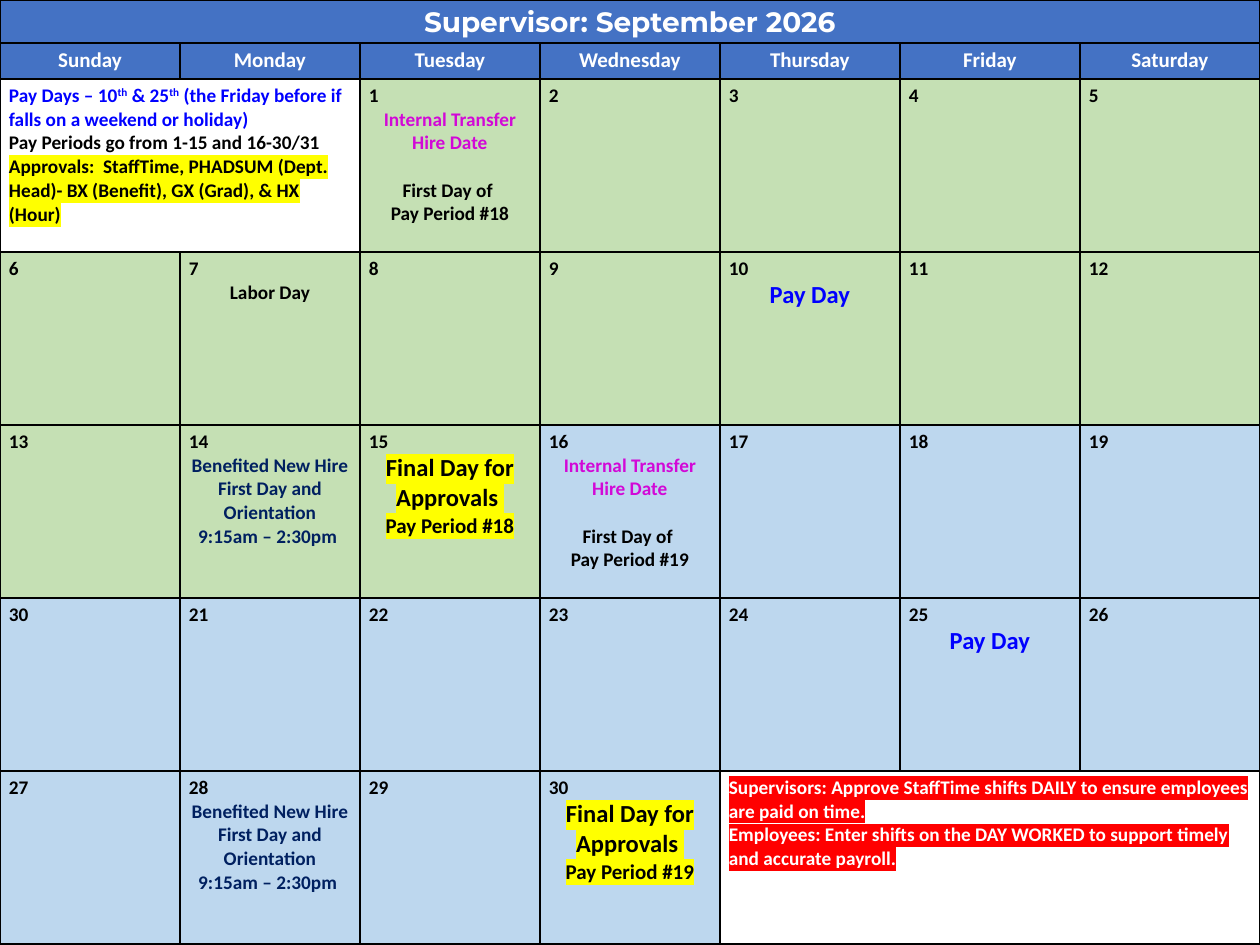
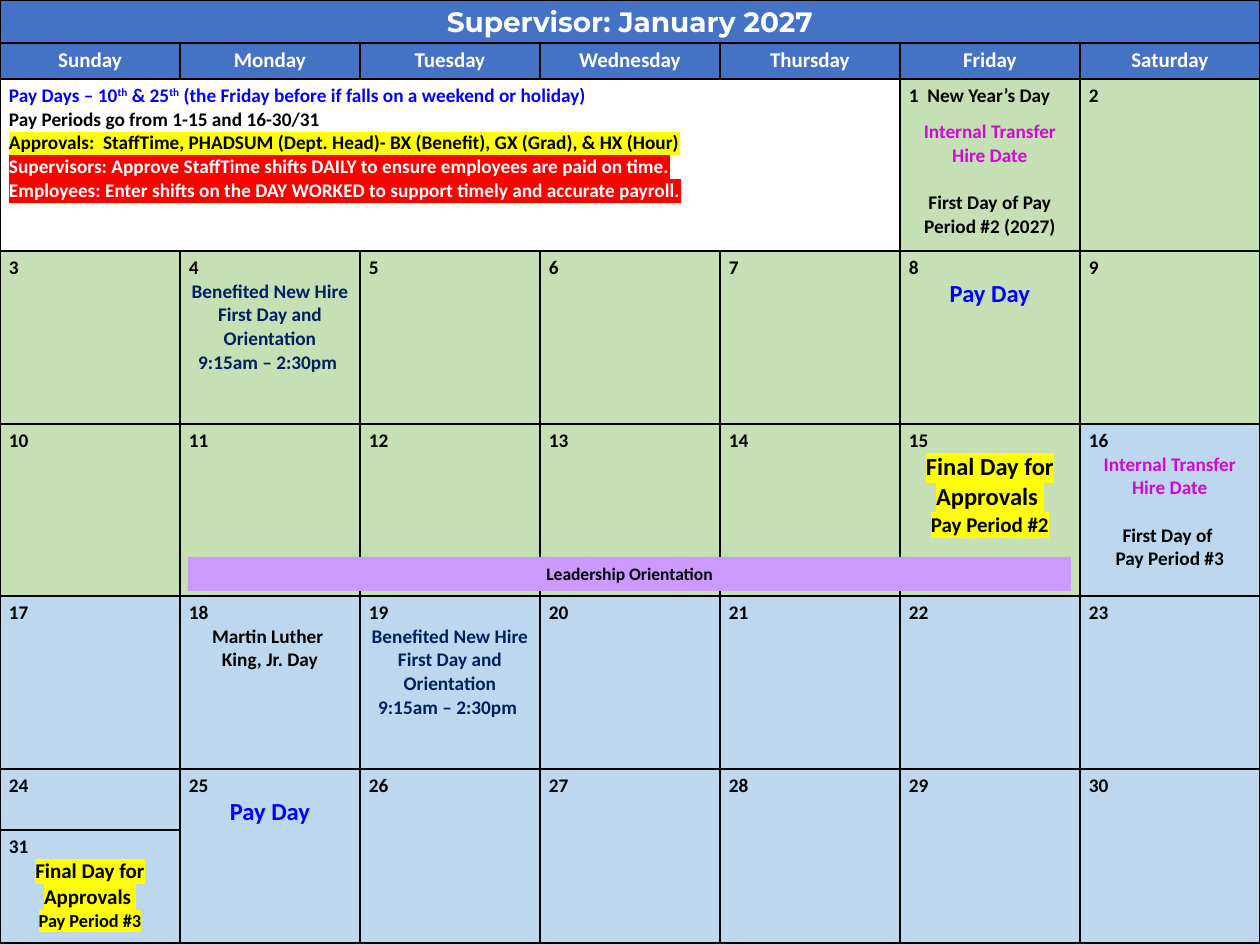
from dataclasses import dataclass
from lxml.etree import SubElement
from pptx import Presentation
from pptx.dml.color import RGBColor
from pptx.enum.shapes import MSO_SHAPE
from pptx.enum.text import PP_ALIGN
from pptx.oxml.ns import qn
from pptx.util import Pt


@dataclass(frozen=True)
class Style:
    size: float
    color: str
    highlight: str = ""
    align: PP_ALIGN = PP_ALIGN.CENTER
    font: str = "Calibri"


class Theme:
    header = "4472C4"
    first_half = "C5E0B4"
    second_half = "BDD7EE"
    note = "FFFFFF"
    band = "CC99FF"
    border = "000000"
    backdrop = [(0, "F6F8FC"), (74, "ABC0E4"), (83, "ABC0E4"), (100, "C7D5ED")]
    styles = {
        "title": Style(16, "FFFFFF", font="Montserrat"),
        "weekday": Style(12, "FFFFFF"),
        "date": Style(11, "000000", align=PP_ALIGN.LEFT),
        "event": Style(11, "000000"),
        "transfer": Style(11, "D208D7"),
        "orientation": Style(11, "002060"),
        "pay day": Style(14, "0000FF"),
        "final day": Style(14, "000000", "FFFF00"),
        "final period": Style(12, "000000", "FFFF00"),
        "small final period": Style(10.5, "000000", "FFFF00"),
        "pay note": Style(11, "0000FF", align=PP_ALIGN.LEFT),
        "approval note": Style(11, "000000", "FFFF00", PP_ALIGN.LEFT),
        "alert": Style(11, "FFFFFF", "FF0000", PP_ALIGN.LEFT),
        "band": Style(10, "000000"),
    }


def px(length):
    return round(length * 914400 / 126)


def write(frame, lines):
    for index, (name, text, gap) in enumerate(lines):
        style = Theme.styles[name]
        para = frame.add_paragraph() if index else frame.paragraphs[0]
        para.alignment = style.align
        if gap:
            para.space_before = Pt(gap)
        para.font.name = style.font
        para.font.size = Pt(style.size)
        para.font.bold = True
        para.font.color.rgb = RGBColor.from_string(style.color)
        for part, piece in enumerate(text.split("^")):
            span = para.add_run()
            span.text = piece
            properties = span._r.get_or_add_rPr()
            if part % 2:
                properties.set("baseline", "30000")
            if style.highlight:
                highlight = SubElement(properties, qn("a:highlight"))
                SubElement(highlight, qn("a:srgbClr"), val=style.highlight)


weekdays = ["Sunday", "Monday", "Tuesday", "Wednesday", "Thursday", "Friday", "Saturday"]
pay_notes = [
    ("pay note", "Pay Days – 10^th^ & 25^th^ (the Friday before if falls on a weekend or holiday)", 0),
    ("date", "Pay Periods go from 1-15 and 16-30/31", 0),
    ("approval note", "Approvals:  StaffTime, PHADSUM (Dept. Head)- BX (Benefit), GX (Grad), & HX (Hour)", 0),
]
alerts = [
    ("alert", "Supervisors: Approve StaffTime shifts DAILY to ensure employees are paid on time.", 0),
    ("alert", "Employees: Enter shifts on the DAY WORKED to support timely and accurate payroll.", 0),
]
pay_day = [("pay day", "Pay Day", 0)]
orientation = [
    ("orientation", "Benefited New Hire First Day and Orientation", 0),
    ("orientation", "9:15am – 2:30pm ", 0),
]
final_day = ("final day", "Final Day for Approvals ", 0)
transfer = ("transfer", "Internal Transfer Hire Date", 0)
period_start = [transfer, ("event", "First Day of ", 13.4)]

months = [
    {
        "title": "Supervisor: September 2026",
        "heights": [43, 36] + [173] * 5,
        "offset": 2,
        "days": 30,
        "labels": {20: "30"},
        "notes": [(2, 0, 1, pay_notes), (6, 4, 6, alerts)],
        "split_columns": [],
        "bands": [],
        "events": {
            1: [*period_start, ("event", "Pay Period #18", 0)],
            7: [("event", "Labor Day", 0)],
            10: pay_day,
            14: orientation,
            15: [final_day, ("final period", "Pay Period #18", 0)],
            16: [*period_start, ("event", "Pay Period #19", 0)],
            25: pay_day,
            28: orientation,
            30: [final_day, ("final period", "Pay Period #19", 0)],
        },
    },
    {
        "title": "Supervisor: January 2027",
        "heights": [43, 36, 172, 173, 172, 173, 61, 113],
        "offset": 5,
        "days": 31,
        "labels": {1: "1  New Year’s Day"},
        "notes": [(2, 0, 4, pay_notes + alerts)],
        "split_columns": range(1, 7),
        "bands": [("Leadership Orientation", 188, 557, 883, 34)],
        "events": {
            1: [
                ("transfer", "Internal Transfer Hire Date", 7.3),
                ("event", "First Day of Pay Period #2 (2027)", 13.4),
            ],
            4: orientation,
            8: pay_day,
            15: [final_day, ("final period", "Pay Period #2", 0)],
            16: [*period_start, ("event", "Pay Period #3", 0)],
            18: [("event", "Martin Luther ", 0), ("event", "King, Jr. Day", 0)],
            19: orientation,
            25: pay_day,
            31: [
                ("final period", "Final Day for Approvals ", 0),
                ("small final period", "Pay Period #3", 0),
            ],
        },
    },
]

deck = Presentation()
deck.slide_width = px(1260)
deck.slide_height = px(945)

backdrop = deck.slide_master.background.fill
backdrop.gradient()
backdrop.gradient_angle = 270
stops = deck.slide_master.element.find(".//" + qn("a:gsLst"))
for stop in list(stops):
    stops.remove(stop)
for position, color in Theme.backdrop:
    stop = SubElement(stops, qn("a:gs"), pos=str(position * 1000))
    SubElement(stop, qn("a:srgbClr"), val=color)

for month in months:
    page = deck.slides.add_slide(deck.slide_layouts[6])
    heights = month["heights"]
    table = page.shapes.add_table(len(heights), 7, 0, 0, px(1260), px(sum(heights))).table
    table.first_row = False
    table.horz_banding = False
    for column in table.columns:
        column.width = px(180)
    for row, height in zip(table.rows, heights):
        row.height = px(height)

    for cell in table.iter_cells():
        cell.margin_left = cell.margin_right = px(9)
        cell.margin_top = px(5)
        cell.margin_bottom = px(4)
        for side in ("a:lnL", "a:lnR", "a:lnT", "a:lnB"):
            border = SubElement(cell._tc.get_or_add_tcPr(), qn(side), w=str(Pt(1)))
            fill = SubElement(border, qn("a:solidFill"))
            SubElement(fill, qn("a:srgbClr"), val=Theme.border)

    contents = [(0, 0, Theme.header, [("title", month["title"], 0)])]
    table.cell(0, 0).merge(table.cell(0, 6))
    for column, weekday in enumerate(weekdays):
        contents.append((1, column, Theme.header, [("weekday", weekday, 0)]))
    for row, first, last, lines in month["notes"]:
        table.cell(row, first).merge(table.cell(row, last))
        contents.append((row, first, Theme.note, lines))
    for column in month["split_columns"]:
        table.cell(6, column).merge(table.cell(7, column))
    for day in range(1, month["days"] + 1):
        week, column = divmod(month["offset"] + day - 1, 7)
        color = Theme.first_half if day <= 15 else Theme.second_half
        label = ("date", month["labels"].get(day, str(day)), 0)
        contents.append((week + 2, column, color, [label, *month["events"].get(day, [])]))

    for row, column, color, lines in contents:
        cell = table.cell(row, column)
        cell.fill.solid()
        cell.fill.fore_color.rgb = RGBColor.from_string(color)
        write(cell.text_frame, lines)

    for text, left, top, width, height in month["bands"]:
        box = page.shapes.add_shape(MSO_SHAPE.RECTANGLE, px(left), px(top), px(width), px(height))
        box.shadow.inherit = False
        box.fill.solid()
        box.fill.fore_color.rgb = RGBColor.from_string(Theme.band)
        box.line.fill.background()
        box.text_frame.word_wrap = True
        write(box.text_frame, [("band", text, 0)])

deck.save("out.pptx")
